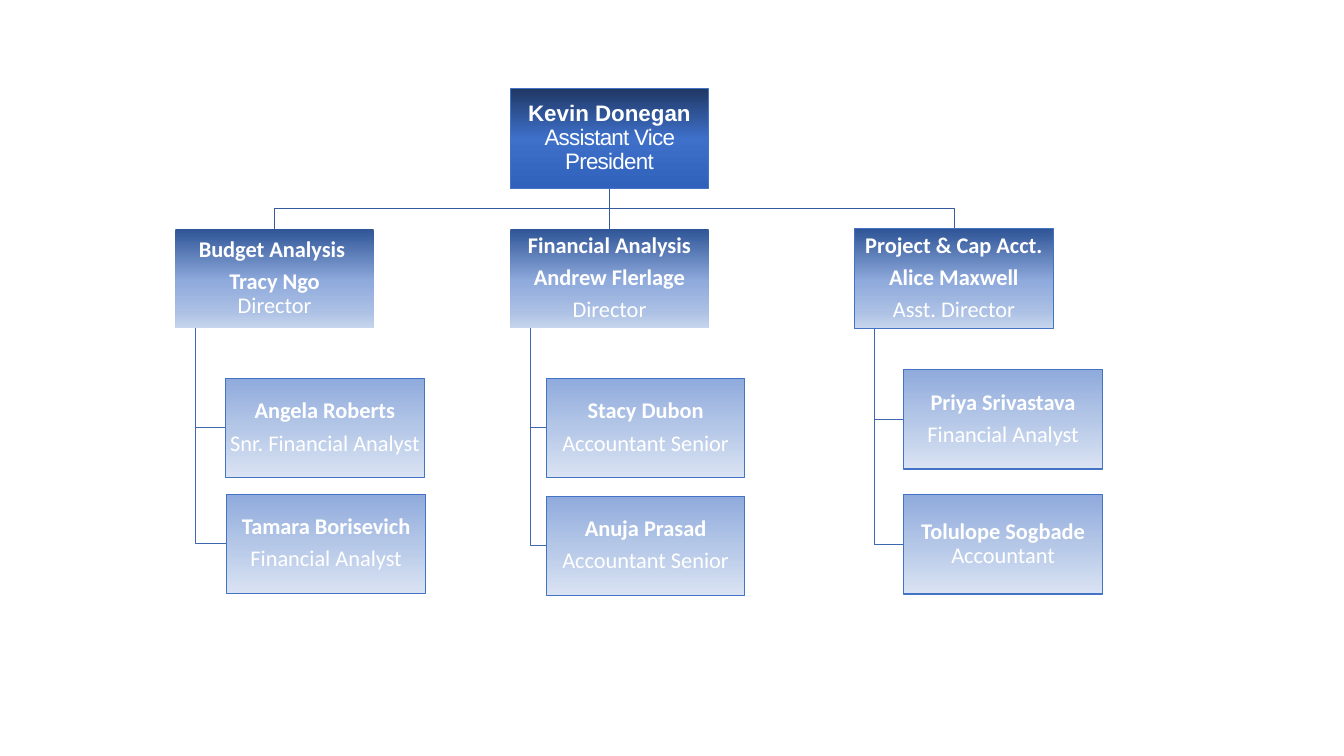
from pptx import Presentation
from pptx.dml.color import RGBColor
from pptx.enum.shapes import MSO_SHAPE
from pptx.enum.text import MSO_ANCHOR, PP_ALIGN
from pptx.oxml.ns import qn
from pptx.util import Cm, Pt
from lxml.etree import SubElement

COLORS = {
    "text": "FFFFFF",
    "border": "4472C4",
    "upper_line": "365B9D",
    "lower_line": "3E67B2",
}
GRADIENTS = {
    "head": [(0, "203864"), (50, "3E70CA"), (100, "3062BB")],
    "director": [(0, "2F5597"), (53, "8FAADC"), (83, "ABC0E4"), (100, "C7D5ED")],
    "staff": [(0, "8FAADC"), (50, "B4C7E7"), (100, "DAE3F3")],
}
BOX_WIDTH, BOX_HEIGHT = 5, 2.5
HEAD_LEFT, HEAD_TOP = 12.86, 2.24
DIRECTOR_TOP = 5.77
TRUNK_INSET = 0.5

# Each text is a list of paragraphs, each paragraph a list of runs;
# "\v" is a line break and the last run of a box is the job title.
HEAD_TEXT = [["Kevin Donegan\v", "Assistant Vice President"]]
TEAMS = [
    {
        "left": 4.42,
        "text": [["Budget Analysis "], ["Tracy Ngo\v", "Director"]],
        "bordered": False,
        "staff": [
            (5.69, 9.53, [["Angela Roberts"], ["Snr. Financial Analyst"]]),
            (5.72, 12.45, [["Tamara Borisevich"], ["Financial Analyst"]]),
        ],
    },
    {
        "left": 12.86,
        "text": [["Financial Analysis"], ["Andrew Flerlage"], ["Director"]],
        "bordered": False,
        "staff": [
            (13.77, 9.53, [["Stacy Dubon"], ["Accountant Senior"]]),
            (13.77, 12.5, [["Anuja Prasad"], ["Accountant Senior"]]),
        ],
    },
    {
        "left": 21.54,
        "text": [["Project & Cap Acct."], ["Alice Maxwell"], ["Asst. Director"]],
        "bordered": True,
        "staff": [
            (22.78, 9.32, [["Priya Srivastava"], ["Financial Analyst"]]),
            (22.78, 12.47, [["Tolulope Sogbade ", "Accountant"]]),
        ],
    },
]


def fill_gradient(shape, stops):
    """Fill the shape from top to bottom with (percent, colour) stops."""
    shape.fill.gradient()
    shape.fill.gradient_angle = 270
    stop_list = shape.element.spPr.find(qn("a:gradFill")).find(qn("a:gsLst"))
    for old_stop in list(stop_list):
        stop_list.remove(old_stop)
    for percent, color in stops:
        stop = SubElement(stop_list, qn("a:gs"), pos=str(percent * 1000))
        SubElement(stop, qn("a:srgbClr"), val=color)


def write_text(frame, paragraphs, font_name, title_spacing):
    frame.word_wrap = True
    frame.vertical_anchor = MSO_ANCHOR.MIDDLE
    frame.margin_left = frame.margin_right = Cm(0.03)
    frame.margin_top = frame.margin_bottom = Cm(0.03)
    for index, runs in enumerate(paragraphs):
        para = frame.paragraphs[0] if index == 0 else frame.add_paragraph()
        para.alignment = PP_ALIGN.CENTER
        para.line_spacing = 0.9
        para.space_after = Pt(5.6)
        para.font.name = font_name
        para.font.size = Pt(16)
        para.font.color.rgb = RGBColor.from_string(COLORS["text"])
        for text in runs:
            span = para.add_run()
            span.text = text.rstrip("\v")
            span.font.bold = True
            if text.endswith("\v"):
                para.add_line_break()
    span.font.bold = False
    if title_spacing:
        span.font._element.set("spc", str(title_spacing))


def add_box(page, left, top, text, level, bordered=True, font_name="Calibri",
            title_spacing=0):
    box = page.shapes.add_shape(MSO_SHAPE.RECTANGLE, Cm(left), Cm(top),
                                Cm(BOX_WIDTH), Cm(BOX_HEIGHT))
    box.shadow.inherit = False
    fill_gradient(box, GRADIENTS[level])
    if bordered:
        box.line.color.rgb = RGBColor.from_string(COLORS["border"])
        box.line.width = Pt(0.75)
    else:
        box.line.fill.background()
    write_text(box.text_frame, text, font_name, title_spacing)


def add_branch(page, points, color):
    """Draw an open line through points given in centimetres."""
    start, *rest = [(Cm(x), Cm(y)) for x, y in points]
    builder = page.shapes.build_freeform(*start)
    builder.add_line_segments(rest, close=False)
    branch = builder.convert_to_shape()
    branch.shadow.inherit = False
    branch.fill.background()
    branch.line.color.rgb = RGBColor.from_string(COLORS[color])
    branch.line.width = Pt(0.5)


def add_team_branches(page, team):
    head_center = HEAD_LEFT + BOX_WIDTH / 2
    head_bottom = HEAD_TOP + BOX_HEIGHT
    director_center = team["left"] + BOX_WIDTH / 2
    bus = (head_bottom + DIRECTOR_TOP) / 2
    add_branch(page, [(head_center, head_bottom), (head_center, bus),
                      (director_center, bus), (director_center, DIRECTOR_TOP)],
               "upper_line")
    trunk = team["left"] + TRUNK_INSET
    for left, top, _ in team["staff"]:
        middle = top + BOX_HEIGHT / 2
        add_branch(page, [(trunk, DIRECTOR_TOP + BOX_HEIGHT), (trunk, middle),
                          (left, middle)], "lower_line")


def main():
    deck = Presentation()
    deck.slide_width, deck.slide_height = Cm(33.87), Cm(19.05)
    page = deck.slides.add_slide(deck.slide_layouts[6])
    for team in TEAMS:
        add_team_branches(page, team)
    add_box(page, HEAD_LEFT, HEAD_TOP, HEAD_TEXT, "head",
            font_name="Arial", title_spacing=-50)
    for team in TEAMS:
        add_box(page, team["left"], DIRECTOR_TOP, team["text"], "director",
                team["bordered"])
        for left, top, text in team["staff"]:
            add_box(page, left, top, text, "staff")
    deck.save("out.pptx")


if __name__ == "__main__":
    main()
